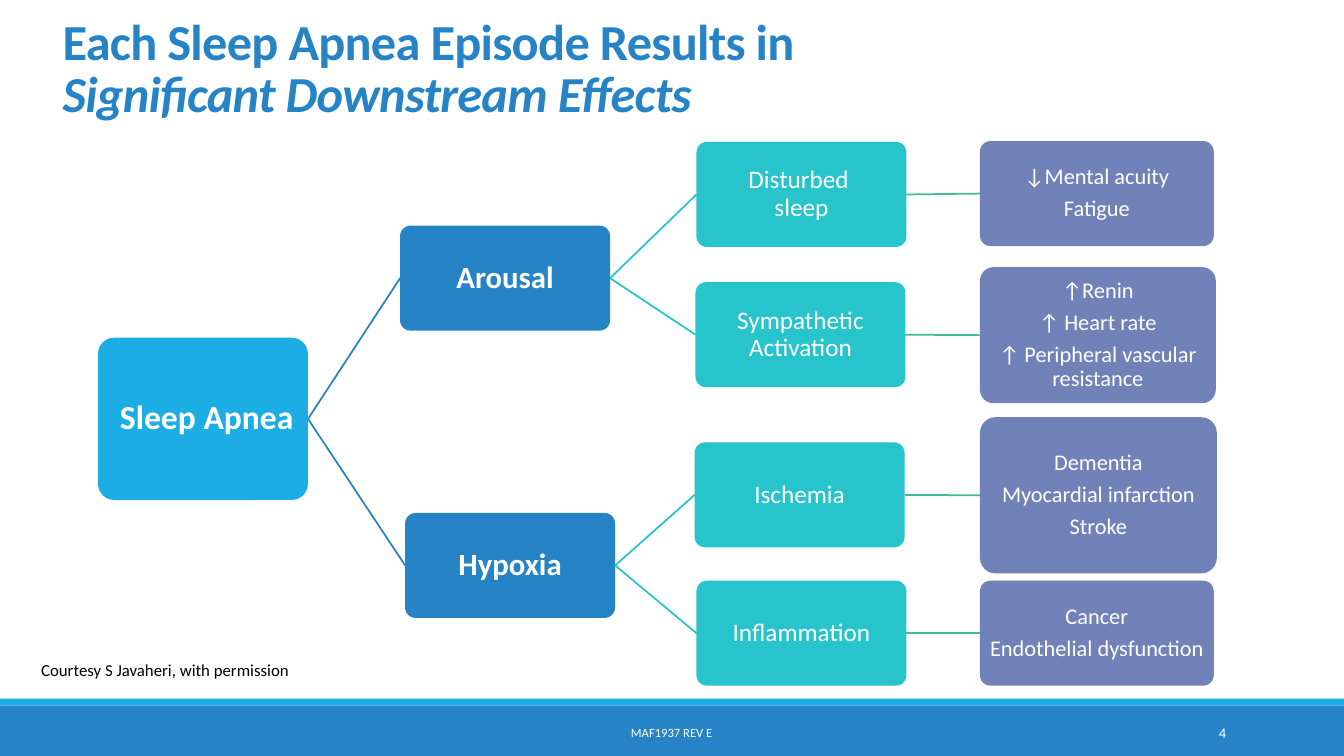
from dataclasses import dataclass, field

from lxml import etree
from pptx import Presentation
from pptx.dml.color import RGBColor
from pptx.enum import shapes, text
from pptx.oxml import ns
from pptx.util import Pt

FONT = "Calibri"
SKY, BLUE, WHITE, BLACK = "1CADE4", "2683C6", "FFFFFF", "000000"
TEAL, VIOLET, GREEN = "28C4CC", "7182B8", "42BA97"
LEFT, RIGHT = 1, 3  # connection sites of a rectangle


@dataclass
class Level:
    fill: str
    link: str
    size: float
    bold: bool
    inset: float


@dataclass
class Node:
    lines: list[str]
    left: float
    top: float
    width: float = 150
    height: float = 75
    space_after: float = 0.35  # share of the font size
    children: list["Node"] = field(default_factory=list)


LEVELS = [
    Level(SKY, SKY, 24, True, 1.5),
    Level(BLUE, BLUE, 22, True, 1.5),
    Level(TEAL, TEAL, 18, False, 1),
    Level(VIOLET, GREEN, 16, False, 1),
]

mental = Node(["↓Mental acuity", "Fatigue"], 700, 100.8, 167)
circulation = Node(["↑Renin", "↑ Heart rate", "↑ Peripheral vascular resistance"],
                   700, 190.8, 168.5, 97.2)
vascular = Node(["Dementia", "Myocardial infarction", "Stroke"],
                700, 298, 169.2, 111.6)
cellular = Node(["Cancer", "Endothelial dysfunction"], 700, 414.8, 167)

arousal = Node(["Arousal"], 285.8, 161.2, children=[
    Node(["Disturbed ", "sleep"], 497.5, 101.4, space_after=0, children=[mental]),
    Node(["Sympathetic Activation"], 496.8, 201.6, children=[circulation]),
])
hypoxia = Node(["Hypoxia"], 289.4, 366.4, children=[
    Node(["Ischemia"], 496.2, 316, children=[vascular]),
    Node(["Inflammation"], 497.5, 414.8, children=[cellular]),
])
sleep_apnea = Node([" Sleep Apnea"], 70, 241.2, height=116,
                   children=[arousal, hypoxia])


def rgb(code: str) -> RGBColor:
    return RGBColor.from_string(code)


def add_run(paragraph, words: str, size: float, color: str,
            bold: bool = False, italic: bool = False):
    run = paragraph.add_run()
    run.text = words
    run.font.name, run.font.size = FONT, Pt(size)
    run.font.bold, run.font.italic = bold, italic
    run.font.color.rgb = rgb(color)
    return run


def add_block(slide, kind, left: float, top: float, width: float,
              height: float, fill: str):
    block = slide.shapes.add_shape(kind, Pt(left), Pt(top), Pt(width), Pt(height))
    block.shadow.inherit = False
    block.fill.solid()
    block.fill.fore_color.rgb = rgb(fill)
    block.line.fill.background()
    return block


def add_link(slide, parent, child, color: str) -> None:
    link = slide.shapes.add_connector(shapes.MSO_CONNECTOR.STRAIGHT, 0, 0, 0, 0)
    link.begin_connect(parent, RIGHT)
    link.end_connect(child, LEFT)
    link.line.color.rgb = rgb(color)
    link.line.width = Pt(1.25)
    etree.SubElement(link._element.spPr, ns.qn("a:effectLst"))


def add_tree(slide, node: Node, depth: int = 0):
    """Draw a node and, to its right, everything that follows from it."""
    level = LEVELS[depth]
    box = add_block(slide, shapes.MSO_SHAPE.ROUNDED_RECTANGLE, node.left,
                    node.top, node.width, node.height, level.fill)
    box.adjustments[0] = 0.1
    frame = box.text_frame
    frame.word_wrap = True
    frame.vertical_anchor = text.MSO_ANCHOR.MIDDLE
    frame.margin_left = frame.margin_right = Pt(level.inset)
    frame.margin_top = frame.margin_bottom = Pt(level.inset)
    for index, line in enumerate(node.lines):
        paragraph = frame.add_paragraph() if index else frame.paragraphs[0]
        paragraph.alignment = text.PP_ALIGN.CENTER
        paragraph.line_spacing = 0.9
        paragraph.space_after = Pt(node.space_after * level.size)
        add_run(paragraph, line, level.size, WHITE, level.bold)
    for child in node.children:
        child_box = add_tree(slide, child, depth + 1)
        add_link(slide, box, child_box, LEVELS[depth + 1].link)
    return box


def add_note(slide, words: str, left: float, top: float, width: float,
             height: float, size: float, color: str, align, anchor) -> None:
    note = slide.shapes.add_textbox(Pt(left), Pt(top), Pt(width), Pt(height))
    frame = note.text_frame
    frame.word_wrap = True
    frame.vertical_anchor = anchor
    frame.paragraphs[0].alignment = align
    add_run(frame.paragraphs[0], words, size, color)


def set_title(slide) -> None:
    title = slide.shapes.title
    title.left, title.top = Pt(37.5), Pt(39)
    title.width, title.height = Pt(864), Pt(52)
    frame = title.text_frame
    frame.word_wrap = True
    frame.auto_size = text.MSO_AUTO_SIZE.NONE
    frame.vertical_anchor = text.MSO_ANCHOR.BOTTOM
    paragraph = frame.paragraphs[0]
    paragraph.alignment = text.PP_ALIGN.LEFT
    paragraph.line_spacing = 0.85
    statement = add_run(paragraph, "Each Sleep Apnea Episode Results in",
                        36, BLUE, bold=True)
    paragraph.add_line_break()
    emphasis = add_run(paragraph, "Significant Downstream Effects",
                       36, BLUE, bold=True, italic=True)
    for run in (statement, emphasis):
        run.font._element.set("spc", "-50")


def main() -> None:
    deck = Presentation()
    deck.slide_width, deck.slide_height = Pt(960), Pt(540)
    slide = deck.slides.add_slide(deck.slide_layouts[5])
    add_block(slide, shapes.MSO_SHAPE.RECTANGLE, 0, 504, 960, 36, BLUE)
    add_block(slide, shapes.MSO_SHAPE.RECTANGLE, 0, 499, 960, 5, SKY)
    set_title(slide)
    add_tree(slide, sleep_apnea)

    align, anchor = text.PP_ALIGN, text.MSO_ANCHOR
    add_note(slide, "Courtesy S Javaheri, with permission",
             22.3, 468, 428, 22, 12, BLACK, align.LEFT, anchor.TOP)
    add_note(slide, "4", 780, 508.5, 103, 29, 10.5, WHITE,
             align.RIGHT, anchor.MIDDLE)
    add_note(slide, "MAF1937 REV E", 290, 508.5, 379.5, 29, 9, WHITE,
             align.CENTER, anchor.MIDDLE)
    deck.save("out.pptx")


if __name__ == "__main__":
    main()
